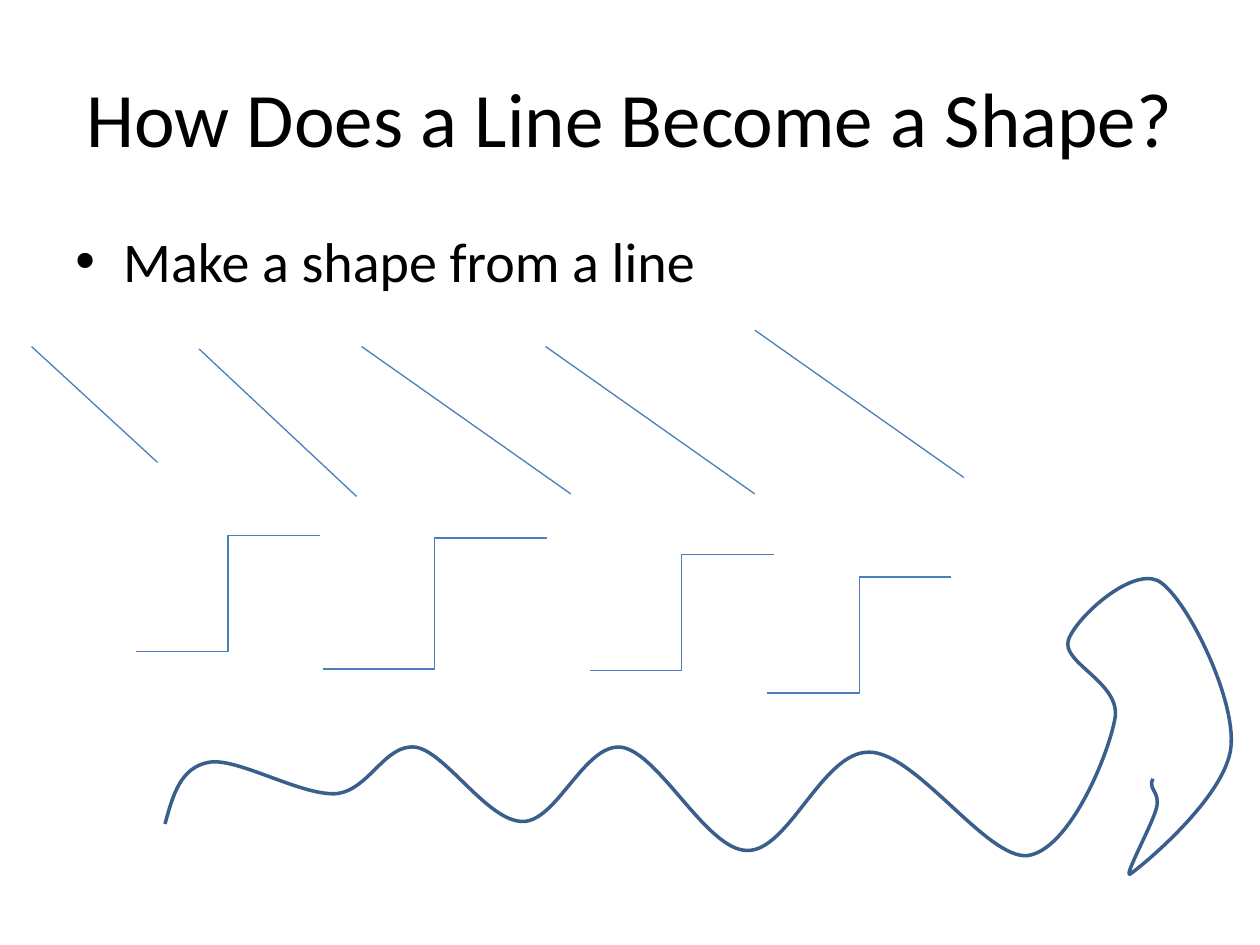
import pptx
import pptx.util
import pptx.dml.color
import pptx.enum.shapes
import pptx.enum.text
import pptx.oxml
import pptx.oxml.ns
from lxml import etree

Inches, Pt = pptx.util.Inches, pptx.util.Pt
ALIGN = pptx.enum.text.PP_ALIGN
ANCHOR = pptx.enum.text.MSO_ANCHOR
CONNECTOR = pptx.enum.shapes.MSO_CONNECTOR
qn = pptx.oxml.ns.qn
COLOURS = {"text": "000000", "line": "4B7EBC", "curve": "3A5F8C"}


def rgb(name):
    return pptx.dml.color.RGBColor.from_string(COLOURS[name])


def write_text(frame, text, size, align=ALIGN.LEFT, anchor=ANCHOR.TOP, before=0):
    frame.word_wrap = True
    frame.auto_size = pptx.enum.text.MSO_AUTO_SIZE.NONE
    frame.vertical_anchor = anchor
    paragraph = frame.paragraphs[0]
    paragraph.alignment = align
    paragraph.space_before = Pt(before)
    run = paragraph.add_run()
    run.text = text
    run.font.name = "Calibri"
    run.font.size = Pt(size)
    run.font.color.rgb = rgb("text")
    return paragraph


class SlideBuilder:
    def __init__(self, slide):
        self.slide = slide
        self.shapes = slide.shapes

    def place(self, shape, left, top, width, height):
        shape.left, shape.top = Inches(left), Inches(top)
        shape.width, shape.height = Inches(width), Inches(height)

    def title(self, text, box):
        heading = self.shapes.title
        self.place(heading, *box)
        write_text(heading.text_frame, text, 44, align=ALIGN.CENTER, anchor=ANCHOR.MIDDLE)

    def bullet(self, text, box, indent=0.38):
        body = self.shapes.add_textbox(*map(Inches, box))
        paragraph = write_text(body.text_frame, text, 32, before=6.4)
        props = paragraph._p.get_or_add_pPr()
        props.set("marL", str(Inches(indent)))
        props.set("indent", str(-Inches(indent)))
        etree.SubElement(props, qn("a:buFont")).set("typeface", "Arial")
        etree.SubElement(props, qn("a:buChar")).set("char", "•")

    def connector(self, kind, left, top, right, bottom):
        stroke = self.shapes.add_connector(kind, *map(Inches, (left, top, right, bottom)))
        stroke.line.color.rgb = rgb("line")
        stroke.line.width = Pt(0.75)
        etree.SubElement(stroke._element.spPr, qn("a:effectLst"))

    def curve(self, start, segments):
        """Draw cubic segments; all coordinates are hundredths of an inch."""
        knots = [segment[4:] for segment in segments]
        builder = self.shapes.build_freeform(*start, scale=Inches(0.01))
        builder.add_line_segments(knots, close=False)
        squiggle = builder.convert_to_shape()
        left = min(x for x, y in [start] + knots)
        top = min(y for x, y in [start] + knots)

        # Turn each straight step into a cubic one
        steps = list(squiggle._element.iter(qn("a:lnTo")))
        for step, segment in zip(steps, segments):
            bend = etree.Element(qn("a:cubicBezTo"))
            for x, y in zip(segment[::2], segment[1::2]):
                point = etree.SubElement(bend, qn("a:pt"))
                point.set("x", str(x - left))
                point.set("y", str(y - top))
            step.getparent().replace(step, bend)

        squiggle.fill.background()
        squiggle.line.color.rgb = rgb("curve")
        squiggle.line.width = Pt(2)
        squiggle.shadow.inherit = False


def main():
    deck = pptx.Presentation()
    deck.slide_width, deck.slide_height = Inches(10), Inches(7.5)
    page = SlideBuilder(deck.slides.add_slide(deck.slide_layouts[5]))

    # Heading and prompt
    page.title("How Does a Line Become a Shape?", (0.5, 0.3, 9, 1.25))
    page.bullet("Make a shape from a line", (0.5, 1.75, 9, 4.95))

    # Diagonal lines: left, top, width, height
    diagonals = [(0.25, 2.75, 1, 0.92), (1.58, 2.77, 1.25, 1.17)]
    diagonals += [(x, y, 1.66, 1.17) for x, y in ((5.99, 2.62), (2.87, 2.75), (4.33, 2.75))]
    for x, y, width, height in diagonals:
        page.connector(CONNECTOR.STRAIGHT, x, y, x + width, y + height)

    # Steps rising to the right: left, bottom, width, height
    stairs = [(x, y, 1.46, 0.92) for x, y in ((1.08, 5.17), (6.09, 5.5), (4.68, 5.32))]
    stairs.append((2.56, 5.31, 1.78, 1.04))
    for x, y, width, height in stairs:
        page.connector(CONNECTOR.ELBOW, x, y, x + width, y - height)

    # Wavy line ending in a hook
    page.curve((131, 654), [
        (137, 632, 143, 609, 166, 605),
        (188, 601, 238, 631, 266, 630),
        (293, 628, 305, 590, 330, 593),
        (354, 597, 387, 652, 415, 652),
        (442, 652, 464, 590, 493, 593),
        (523, 597, 561, 675, 593, 675),
        (626, 676, 653, 596, 690, 597),
        (727, 597, 784, 683, 816, 679),
        (849, 674, 880, 599, 885, 570),
        (890, 542, 842, 526, 848, 508),
        (854, 490, 900, 448, 921, 462),
        (943, 477, 981, 555, 977, 593),
        (973, 632, 908, 686, 898, 693),
        (889, 701, 915, 654, 918, 641),
        (921, 628, 911, 627, 915, 618),
    ])

    deck.save("out.pptx")


if __name__ == "__main__":
    main()
